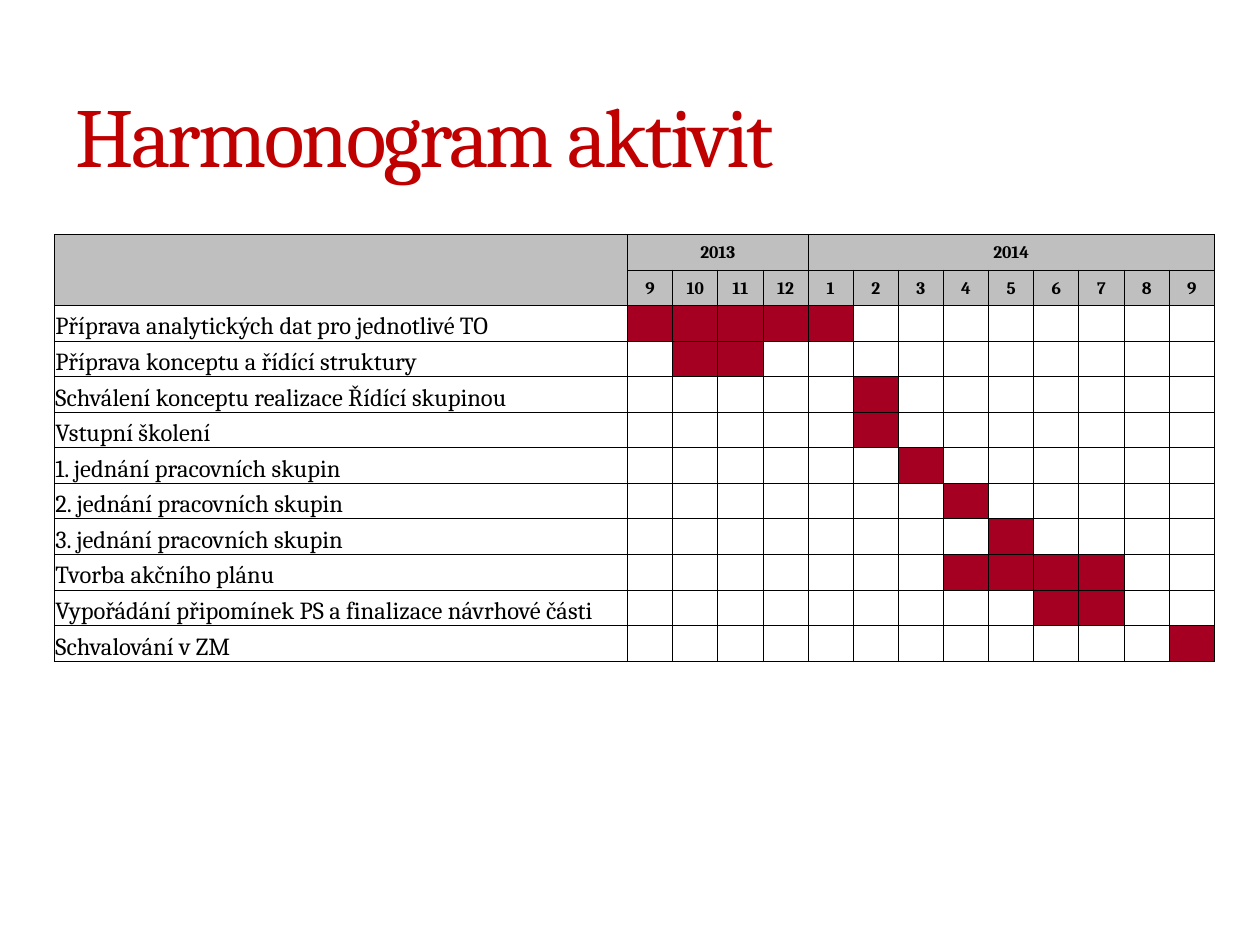
from dataclasses import dataclass
from typing import Optional

from lxml.etree import SubElement
from pptx import Presentation
from pptx.dml.color import RGBColor
from pptx.enum.text import MSO_ANCHOR as Anchor, PP_ALIGN as Align
from pptx.oxml.ns import qn
from pptx.util import Inches, Pt

FONT = "Cambria"
TITLE_RED = RGBColor(0xC0, 0x00, 0x00)
BAR_RED = RGBColor(0xA5, 0x00, 0x21)
HEADER_GREY = RGBColor(0xBF, 0xBF, 0xBF)
BLACK = RGBColor(0x00, 0x00, 0x00)

WIDTH, HEIGHT = Inches(10), Inches(7.5)
TABLE_LEFT, TABLE_TOP = Inches(0.43), Inches(1.86)
TABLE_WIDTH, TABLE_HEIGHT = Inches(9.21), Inches(3.39)
LABEL_WIDTH = Inches(4.55)
HEADER_ROWS = 2


@dataclass(frozen=True)
class Year:
    name: str
    months: range


@dataclass(frozen=True)
class Activity:
    label: str
    start: int
    length: int = 1


YEARS = [Year("2013", range(9, 13)), Year("2014", range(1, 10))]
MONTHS = [month for year in YEARS for month in year.months]
ACTIVITIES = [
    Activity("Příprava analytických dat pro jednotlivé TO", 1, 5),
    Activity("Příprava konceptu a řídící struktury", 2, 2),
    Activity("Schválení konceptu realizace Řídící skupinou", 6),
    Activity("Vstupní školení", 6),
    Activity("1. jednání pracovních skupin", 7),
    Activity("2. jednání pracovních skupin", 8),
    Activity("3. jednání pracovních skupin", 9),
    Activity("Tvorba akčního plánu", 8, 4),
    Activity("Vypořádání připomínek PS a finalizace návrhové části", 10, 2),
    Activity("Schvalování v ZM", 13),
]


def write(paragraph, text: str, size: float, color: RGBColor, bold: bool = False):
    """Add one styled run to a paragraph and return it."""
    run = paragraph.add_run()
    run.text = text
    run.font.name = FONT
    run.font.size = Pt(size)
    run.font.bold = bold
    run.font.color.rgb = color
    return run


def draw_title(slide, text: str) -> None:
    """Draw the slide heading with tightened letter spacing."""
    heading = slide.shapes.add_textbox(
        int(WIDTH * 0.05), Inches(0.44), int(WIDTH * 0.9), Inches(1.25)
    )
    heading.text_frame.word_wrap = True
    heading.text_frame.vertical_anchor = Anchor.MIDDLE
    run = write(heading.text_frame.paragraphs[0], text, 48, TITLE_RED)
    run.font._element.set("spc", "-150")


def format_cell(cell, fill: Optional[RGBColor]) -> None:
    """Give a cell its margins, thin black borders and fill."""
    cell.margin_left = cell.margin_right = cell.margin_top = Inches(0.01)
    cell.margin_bottom = 0
    properties = cell._tc.get_or_add_tcPr()
    for side in ("a:lnL", "a:lnR", "a:lnT", "a:lnB"):
        line = SubElement(properties, qn(side), w=str(Pt(0.5)))
        solid = SubElement(line, qn("a:solidFill"))
        SubElement(solid, qn("a:srgbClr"), val=str(BLACK))
    if fill is None:
        cell.fill.background()
    else:
        cell.fill.solid()
        cell.fill.fore_color.rgb = fill
    SubElement(cell.text_frame.paragraphs[0]._p, qn("a:endParaRPr"), sz="1000")


def write_header(cell, text: str) -> None:
    """Write a centred bold year or month."""
    cell.vertical_anchor = Anchor.MIDDLE
    paragraph = cell.text_frame.paragraphs[0]
    paragraph.alignment = Align.CENTER
    write(paragraph, text, 10, BLACK, bold=True)


def cell_fill(row: int, column: int) -> Optional[RGBColor]:
    """Pick the header grey, the bar red or no fill for a grid position."""
    if row < HEADER_ROWS:
        return HEADER_GREY
    activity = ACTIVITIES[row - HEADER_ROWS]
    active = activity.start <= column < activity.start + activity.length
    return BAR_RED if active else None


def draw_schedule(slide) -> None:
    """Draw the activity schedule as a table of months."""
    row_count, column_count = HEADER_ROWS + len(ACTIVITIES), 1 + len(MONTHS)
    schedule = slide.shapes.add_table(
        row_count, column_count, TABLE_LEFT, TABLE_TOP, TABLE_WIDTH, TABLE_HEIGHT
    ).table
    schedule.first_row = schedule.horz_banding = False
    for index, column in enumerate(schedule.columns):
        month_width = (TABLE_WIDTH - LABEL_WIDTH) // len(MONTHS)
        column.width = month_width if index else LABEL_WIDTH
    for row_index, row in enumerate(schedule.rows):
        row.height = TABLE_HEIGHT // row_count
        for column_index, cell in enumerate(row.cells):
            format_cell(cell, cell_fill(row_index, column_index))

    schedule.cell(0, 0).merge(schedule.cell(1, 0))
    first = 1
    for year in YEARS:
        last = first + len(year.months) - 1
        schedule.cell(0, first).merge(schedule.cell(0, last))
        write_header(schedule.cell(0, first), year.name)
        first = last + 1
    for column_index, month in enumerate(MONTHS, start=1):
        write_header(schedule.cell(1, column_index), str(month))
    for row_index, activity in enumerate(ACTIVITIES, start=HEADER_ROWS):
        label = schedule.cell(row_index, 0)
        label.vertical_anchor = Anchor.BOTTOM
        write(label.text_frame.paragraphs[0], activity.label, 14, BLACK)


def main() -> None:
    """Build and save the schedule slide."""
    deck = Presentation()
    deck.slide_width, deck.slide_height = WIDTH, HEIGHT
    slide = deck.slides.add_slide(deck.slide_layouts[6])
    draw_title(slide, "Harmonogram aktivit")
    draw_schedule(slide)
    deck.save("out.pptx")


if __name__ == "__main__":
    main()
